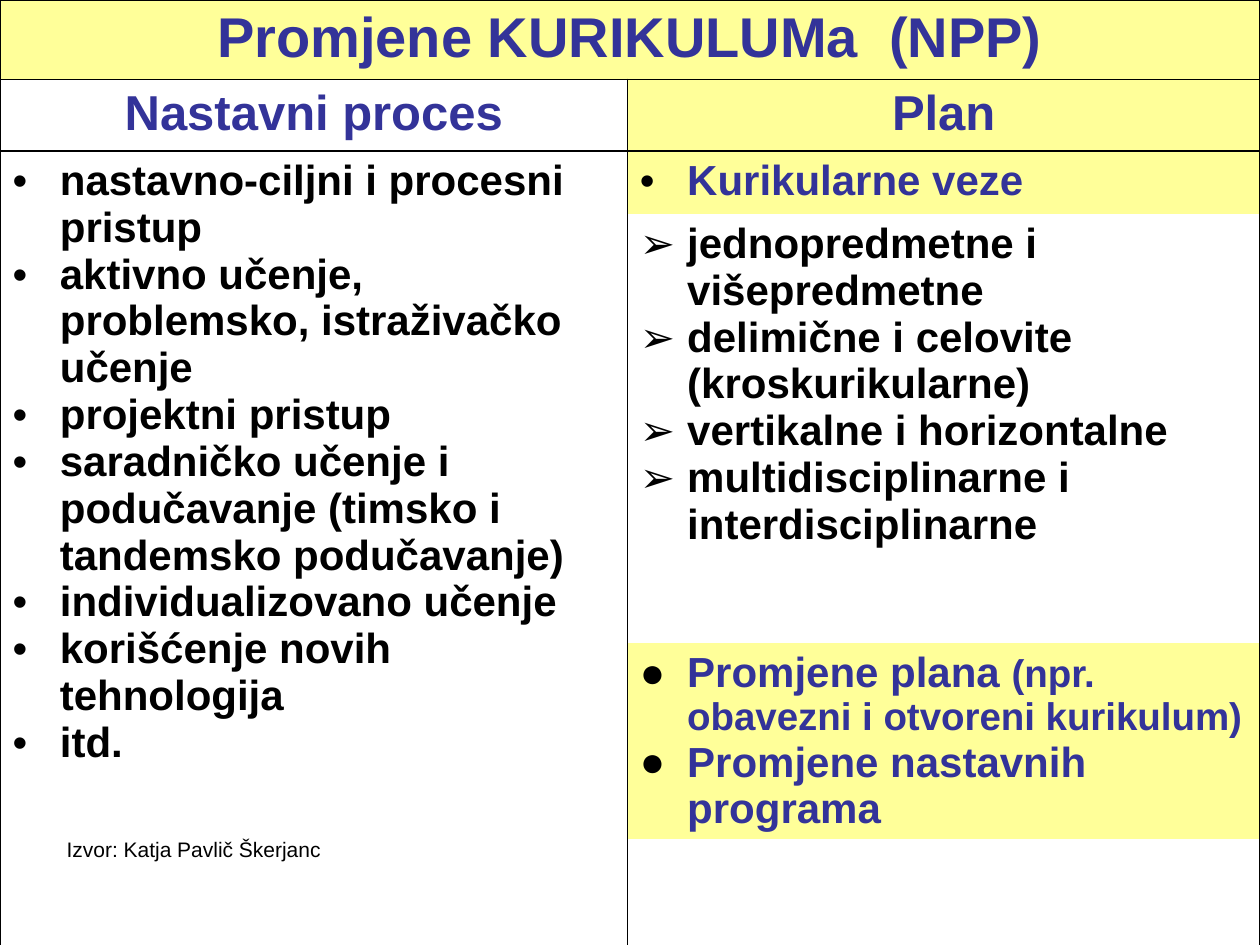
from dataclasses import dataclass

from lxml.etree import SubElement
from pptx import Presentation
from pptx.dml.color import RGBColor
from pptx.enum.text import MSO_AUTO_SIZE as AutoSize, PP_ALIGN as Align
from pptx.oxml import parse_xml
from pptx.oxml.ns import nsdecls, qn
from pptx.table import _Cell as Cell
from pptx.util import Pt

BLACK = RGBColor(0x00, 0x00, 0x00)
INDIGO = RGBColor(0x33, 0x33, 0x99)
YELLOW = RGBColor(0xFF, 0xFF, 0x99)
FONT = "Arial"
INDENT = Pt(27)
COLUMN_WIDTHS = (358.5, 361.5)
ROW_HEIGHTS = (45.4, 41, 36, 209, 36, 91.5, 31, 34)
TABLE_HEIGHT = 552

Piece = tuple[str, float]


@dataclass(frozen=True)
class CellText:
    row: int
    column: int
    paragraphs: tuple[tuple[Piece, ...], ...]
    color: RGBColor
    bullet: str = ""
    tab: float = 0
    filled: bool = False


def lines(size: float, *texts: str) -> tuple[tuple[Piece, ...], ...]:
    """One paragraph for each text, all of one size."""
    return tuple(((text, size),) for text in texts)


CELL_TEXTS = (
    CellText(0, 0, lines(32, "Promjene KURIKULUMa  (NPP)"), INDIGO, filled=True),
    CellText(1, 0, lines(28, "Nastavni proces"), INDIGO),
    CellText(1, 1, lines(28, "Plan"), INDIGO, filled=True),
    CellText(2, 0, lines(
        24,
        "nastavno-ciljni i procesni pristup",
        "aktivno učenje, problemsko, istraživačko učenje",
        "projektni pristup",
        "saradničko učenje i podučavanje (timsko i tandemsko podučavanje)",
        "individualizovano učenje",
        "korišćenje novih tehnologija",
        "itd.",
    ), BLACK, "•", 36),
    CellText(2, 1, lines(24, "Kurikularne veze"), INDIGO, "•", 18, True),
    CellText(3, 1, lines(
        24,
        "jednopredmetne i višepredmetne",
        "delimične i celovite (kroskurikularne)",
        "vertikalne i horizontalne",
        "multidisciplinarne i interdisciplinarne",
    ), BLACK, "➢", 34.5),
    CellText(5, 1, (
        (("Promjene plana ", 24), ("(npr. obavezni i otvoreni kurikulum)", 22)),
        (("Promjene nastavnih programa", 24),),
    ), INDIGO, "●", 18, True),
)


def set_borders(cell: Cell, widths: dict[str, float]) -> None:
    """Draw the sides named in widths and leave the other sides empty."""
    properties = cell._tc.get_or_add_tcPr()
    for index, side in enumerate("LRTB"):
        width = widths.get(side, 0)
        paint = (f'<a:solidFill><a:srgbClr val="{BLACK}"/></a:solidFill>'
                 if width else "<a:noFill/>")
        properties.insert(index, parse_xml(
            f'<a:ln{side} {nsdecls("a")} w="{Pt(width)}">{paint}</a:ln{side}>'))


def add_bullet(paragraph, bullet: str, tab: float) -> None:
    properties = paragraph._p.get_or_add_pPr()
    color = SubElement(properties, qn("a:buClr"))
    SubElement(color, qn("a:srgbClr"), val=str(BLACK))
    SubElement(properties, qn("a:buFont"), typeface=FONT)
    SubElement(properties, qn("a:buChar"), char=bullet)
    tabs = SubElement(properties, qn("a:tabLst"))
    SubElement(tabs, qn("a:tab"), pos=str(Pt(tab)), algn="l")


def write_cell(cell: Cell, content: CellText) -> None:
    frame = cell.text_frame
    for index, pieces in enumerate(content.paragraphs):
        paragraph = frame.add_paragraph() if index else frame.paragraphs[0]
        properties = paragraph._p.get_or_add_pPr()
        properties.set("marL", str(INDENT))
        properties.set("indent", str(-INDENT))
        if content.bullet:
            add_bullet(paragraph, content.bullet, content.tab)
        else:
            paragraph.alignment = Align.CENTER
        font = paragraph.font
        font.name, font.bold, font.size = FONT, True, Pt(pieces[0][1])
        font.color.rgb = content.color
        for text, size in pieces:
            run = paragraph.add_run()
            run.text = text
            if size != pieces[0][1]:
                run.font.size = Pt(size)


presentation = Presentation()
presentation.slide_width, presentation.slide_height = Pt(720), Pt(540)
slide = presentation.slides.add_slide(presentation.slide_layouts[6])

# Table grid
table_frame = slide.shapes.add_table(
    len(ROW_HEIGHTS), len(COLUMN_WIDTHS), 0, 0, Pt(720), Pt(TABLE_HEIGHT))
table = table_frame.table
table.first_row = table.horz_banding = False
for column, width in zip(table.columns, COLUMN_WIDTHS):
    column.width = Pt(width)
for row, height in zip(table.rows, ROW_HEIGHTS):
    row.height = Pt(height)
table_frame.height = Pt(TABLE_HEIGHT)
table.cell(0, 0).merge(table.cell(0, 1))
table.cell(2, 0).merge(table.cell(7, 0))

# Fills and borders: rules around the headings, then only the column sides
filled = {(content.row, content.column) for content in CELL_TEXTS if content.filled}
for row in range(len(ROW_HEIGHTS)):
    for column in range(len(COLUMN_WIDTHS)):
        cell = table.cell(row, column)
        if (row, column) in filled:
            cell.fill.solid()
            cell.fill.fore_color.rgb = YELLOW
        else:
            cell.fill.background()
        widths = {"L": 1 if column else 0.75, "R": 0.75 if column else 1}
        if row == 0:
            widths = {"L": 0.75, "R": 0.75}
        if row <= 2:
            widths["T"] = 1
        if row <= 1 or row == 7 or (row, column) == (2, 0):
            widths["B"] = 1
        set_borders(cell, widths)

# Cell texts
for content in CELL_TEXTS:
    write_cell(table.cell(content.row, content.column), content)

# Source note
note = slide.shapes.add_textbox(Pt(31), Pt(474.5), Pt(164), Pt(21.6))
note.text_frame.word_wrap = True
note.text_frame.auto_size = AutoSize.SHAPE_TO_FIT_TEXT
paragraph = note.text_frame.paragraphs[0]
paragraph.text = "Izvor: Katja Pavlič Škerjanc"
paragraph.font.name, paragraph.font.size = FONT, Pt(12)
paragraph.font.color.rgb = BLACK

presentation.save("out.pptx")
